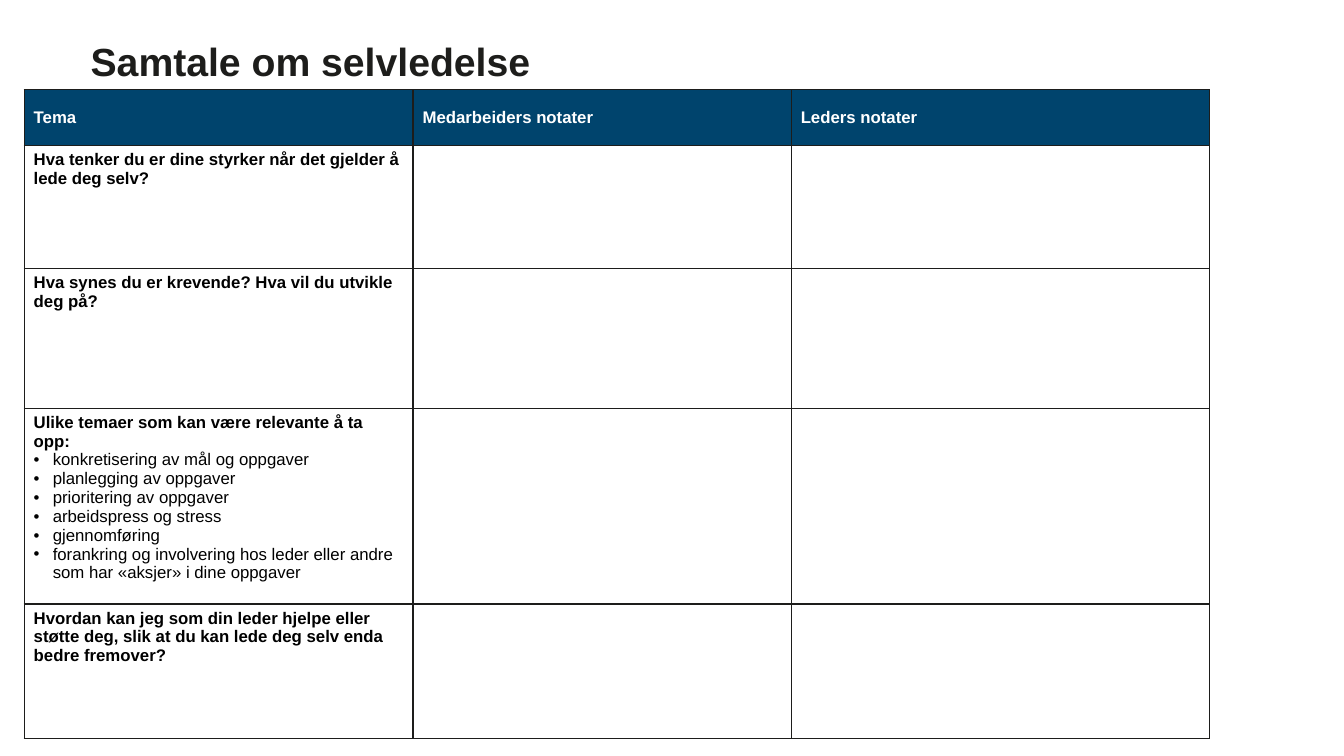
from dataclasses import dataclass

from lxml.etree import SubElement
from pptx import Presentation
from pptx.dml.color import RGBColor
from pptx.enum.text import MSO_ANCHOR, MSO_AUTO_SIZE, PP_ALIGN
from pptx.oxml.ns import qn
from pptx.slide import Slide
from pptx.table import _Cell
from pptx.text.text import _Paragraph
from pptx.util import Cm, Pt

FONT = "Arial"
INK = "1D1D1B"
BLACK = "000000"
WHITE = "FFFFFF"
NAVY = "00446D"
BULLET_INDENT = Cm(0.48)


@dataclass(frozen=True)
class Topic:
    question: str
    height: float
    points: tuple[str, ...] = ()


@dataclass(frozen=True)
class Column:
    heading: str
    width: float


COLUMNS = (
    Column("Tema", 9.8),
    Column("Medarbeiders notater", 9.53),
    Column("Leders notater", 10.54),
)
HEADER_HEIGHT = 1.4
TOPICS = (
    Topic("Hva tenker du er dine styrker når det gjelder å lede deg selv?", 3.1),
    Topic("Hva synes du er krevende? Hva vil du utvikle deg på?", 3.53),
    Topic(
        "Ulike temaer som kan være relevante å ta opp:",
        4.93,
        (
            "konkretisering av mål og oppgaver",
            "planlegging av oppgaver",
            "prioritering av oppgaver",
            "arbeidspress og stress",
            "gjennomføring",
            "forankring og involvering hos leder eller andre som har «aksjer» i dine oppgaver",
        ),
    ),
    Topic(
        "Hvordan kan jeg som din leder hjelpe eller støtte deg, "
        "slik at du kan lede deg selv enda bedre fremover?",
        3.4,
    ),
)


def color(value: str) -> RGBColor:
    return RGBColor.from_string(value)


def add_run(paragraph: _Paragraph, text: str, size: float, ink: str, bold: bool) -> None:
    run = paragraph.add_run()
    run.text = text
    run.font.name = FONT
    run.font.size = Pt(size)
    run.font.bold = bold
    run.font.color.rgb = color(ink)


def add_bullet(paragraph: _Paragraph) -> None:
    properties = paragraph._p.get_or_add_pPr()
    properties.set("marL", str(BULLET_INDENT))
    properties.set("indent", str(-BULLET_INDENT))
    SubElement(properties, qn("a:buFont"), typeface=FONT)
    SubElement(properties, qn("a:buChar"), char="•")


def format_cell(cell: _Cell, fill: str) -> None:
    cell.margin_left = cell.margin_right = Cm(0.24)
    cell.margin_top = cell.margin_bottom = Cm(0.12)
    properties = cell._tc.get_or_add_tcPr()
    for side in ("lnL", "lnR", "lnT", "lnB"):
        line = SubElement(properties, qn(f"a:{side}"), w=str(Pt(1)))
        line_fill = SubElement(line, qn("a:solidFill"))
        SubElement(line_fill, qn("a:srgbClr"), val=INK)
    cell.fill.solid()
    cell.fill.fore_color.rgb = color(fill)


def add_title(slide: Slide, text: str) -> None:
    title = slide.shapes.title
    title.left, title.top, title.width, title.height = Cm(2.03), Cm(0.81), Cm(13.08), Cm(1.45)
    frame = title.text_frame
    frame.word_wrap = True
    frame.auto_size = MSO_AUTO_SIZE.SHAPE_TO_FIT_TEXT
    frame.vertical_anchor = MSO_ANCHOR.TOP
    paragraph = frame.paragraphs[0]
    paragraph.alignment = PP_ALIGN.LEFT
    add_run(paragraph, text, 28, INK, True)


def add_conversation_table(slide: Slide) -> None:
    heights = [HEADER_HEIGHT, *(topic.height for topic in TOPICS)]
    width = sum(column.width for column in COLUMNS)
    frame = slide.shapes.add_table(
        len(heights), len(COLUMNS), Cm(0.61), Cm(2.26), Cm(width), Cm(sum(heights))
    )
    table = frame.table
    table.horz_banding = False
    for row, height in zip(table.rows, heights):
        row.height = Cm(height)
    for index, column in enumerate(COLUMNS):
        table.columns[index].width = Cm(column.width)
        for row_index in range(len(heights)):
            format_cell(table.cell(row_index, index), WHITE if row_index else NAVY)
        heading = table.cell(0, index)
        heading.vertical_anchor = MSO_ANCHOR.MIDDLE
        add_run(heading.text_frame.paragraphs[0], column.heading, 12, WHITE, True)
    for row_index, topic in enumerate(TOPICS, start=1):
        text_frame = table.cell(row_index, 0).text_frame
        add_run(text_frame.paragraphs[0], topic.question, 12, BLACK, True)
        for point in topic.points:
            paragraph = text_frame.add_paragraph()
            add_bullet(paragraph)
            add_run(paragraph, point, 12, BLACK, False)


def main() -> None:
    presentation = Presentation()
    presentation.slide_width = Cm(33.87)
    presentation.slide_height = Cm(19.05)
    slide = presentation.slides.add_slide(presentation.slide_layouts[5])
    add_title(slide, "Samtale om selvledelse")
    add_conversation_table(slide)
    presentation.save("out.pptx")


if __name__ == "__main__":
    main()
